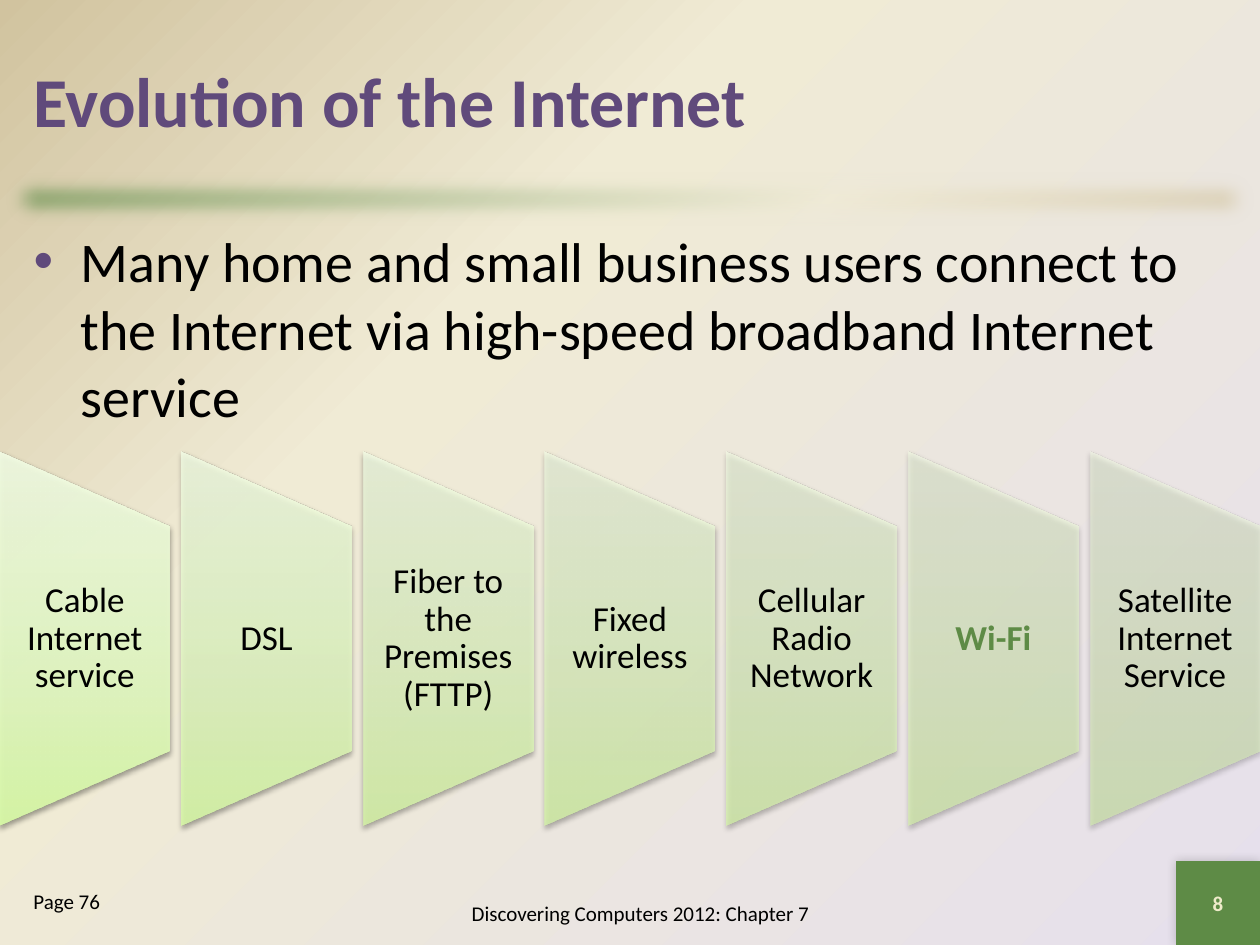
from pptx import Presentation
from pptx import util as u
from pptx.dml.color import RGBColor
from pptx.enum import shapes, text
from pptx.oxml import parse_xml
from pptx.oxml.ns import nsdecls, qn

PURPLE = RGBColor(0x60, 0x4A, 0x7B)
GREEN = RGBColor(0x5E, 0x8B, 0x46)
BLACK = RGBColor(0, 0, 0)
LAVENDER = RGBColor(0xE6, 0xE0, 0xEC)
CREAM = RGBColor(0xF0, 0xEB, 0xD5)
TAN = RGBColor(0xD1, 0xC3, 0x9F)
PALE_YELLOW = RGBColor(0xEE, 0xEB, 0xCA)
LIME = RGBColor(0xDA, 0xFD, 0xA7)
LIGHT_LIME = RGBColor(0xE4, 0xFC, 0xC2)
WHITE_LIME = RGBColor(0xF5, 0xFF, 0xE7)

TITLE = "Evolution of the Internet"
BODY = ("Many home and small business users connect to the Internet "
        "via high-speed broadband Internet service")
SERVICES = [
    "Cable Internet service",
    "DSL",
    "Fiber to the Premises (FTTP)",
    "Fixed wireless",
    "Cellular Radio Network",
    "Wi-Fi",
    "Satellite Internet Service",
]
HIGHLIGHT = "Wi-Fi"
PAGE = "Page 76"
FOOTER = "Discovering Computers 2012: Chapter 7"
NUMBER = "8"

SLIDE_WIDTH, SLIDE_HEIGHT = 720, 540
PANEL_WIDTH, PANEL_HEIGHT = 97, 214
PANEL_MIDDLE = 365
LABEL_HEIGHT = 128
CORNER = 48
CIRCLE = ('<a:path path="circle"><a:fillToRect l="100000" t="100000"/></a:path>'
          '<a:tileRect r="-100000" b="-100000"/>')


def place(shape, left, top, width, height):
    shape.left, shape.top = u.Pt(left), u.Pt(top)
    shape.width, shape.height = u.Pt(width), u.Pt(height)


def linear(angle):
    return f'<a:lin ang="{angle * 60000}" scaled="0"/>'


def set_gradient(parent, colors, direction, opacity=100):
    stops = "".join(
        f'<a:gs pos="{position * 1000}"><a:srgbClr val="{color}">'
        f'<a:alpha val="{round(opacity * 1000)}"/></a:srgbClr></a:gs>'
        for position, color in zip((0, 35 if LIME in colors else 65, 100), colors))
    gradient = parse_xml(
        f'<a:gradFill {nsdecls("a")} rotWithShape="0"><a:gsLst>{stops}</a:gsLst>'
        f'{direction}</a:gradFill>')
    parent.replace(parent.find(qn("a:solidFill")), gradient)


def add_effect(shape, effect):
    effects = shape._element.spPr.find(qn("a:effectLst"))
    effects.append(parse_xml(effect))


def shadow(blur, distance, angle, opacity):
    return (f'<a:outerShdw {nsdecls("a")} blurRad="{u.Pt(blur)}" dist="{u.Pt(distance)}" '
            f'dir="{angle * 60000}" algn="ctr" rotWithShape="0"><a:srgbClr val="{BLACK}">'
            f'<a:alpha val="{opacity * 1000}"/></a:srgbClr></a:outerShdw>')


def add_shape(slide, kind, left, top, width, height):
    shape = slide.shapes.add_shape(
        kind, u.Pt(left), u.Pt(top), u.Pt(width), u.Pt(height))
    shape.shadow.inherit = False
    shape.fill.solid()
    shape.fill.fore_color.rgb = GREEN
    shape.line.fill.background()
    return shape


def write(shape, words, size, color=BLACK, bold=False,
          align=text.PP_ALIGN.LEFT, anchor=text.MSO_ANCHOR.MIDDLE):
    frame = shape.text_frame
    frame.text = words
    frame.word_wrap = True
    frame.auto_size = text.MSO_AUTO_SIZE.NONE
    frame.vertical_anchor = anchor
    paragraph = frame.paragraphs[0]
    paragraph.alignment = align
    paragraph.space_before = u.Pt(0)
    font = paragraph.runs[0].font
    font.name, font.size, font.bold = "Calibri", u.Pt(size), bold
    font.color.rgb = color
    return paragraph


def add_text(slide, box, words, size, **style):
    shape = slide.shapes.add_textbox(*map(u.Pt, box))
    return shape, write(shape, words, size, **style)


def add_bullet(paragraph, indent, color):
    properties = paragraph._p.get_or_add_pPr()
    properties.set("marL", str(u.Pt(indent)))
    properties.set("indent", str(-u.Pt(indent)))
    for element in (f'<a:buClr {nsdecls("a")}><a:srgbClr val="{color}"/></a:buClr>',
                    f'<a:buFont {nsdecls("a")} typeface="Arial"/>',
                    f'<a:buChar {nsdecls("a")} char="•"/>'):
        properties.append(parse_xml(element))


def add_services(slide):
    pitch = (SLIDE_WIDTH - PANEL_WIDTH) / (len(SERVICES) - 1)
    for index, service in enumerate(SERVICES):
        left = index * pitch
        panel = add_shape(
            slide, shapes.MSO_SHAPE.FLOWCHART_MANUAL_OPERATION,
            left + (PANEL_WIDTH - PANEL_HEIGHT) / 2, PANEL_MIDDLE - PANEL_WIDTH / 2,
            PANEL_HEIGHT, PANEL_WIDTH)
        panel.rotation = 270
        opacity = 90 - 40 * index / (len(SERVICES) - 1)
        set_gradient(panel._element.spPr, (LIME, LIGHT_LIME, WHITE_LIME),
                     linear(270), opacity)
        add_effect(panel, shadow(3.1, 1.6, 90, 38))

        chosen = service == HIGHLIGHT
        label, paragraph = add_text(
            slide, (left, PANEL_MIDDLE - LABEL_HEIGHT / 2, PANEL_WIDTH, LABEL_HEIGHT),
            service, 20, color=GREEN if chosen else BLACK, bold=chosen,
            align=text.PP_ALIGN.CENTER)
        paragraph.line_spacing = 0.9
        frame = label.text_frame
        frame.margin_left = frame.margin_right = u.Pt(10)
        frame.margin_top = frame.margin_bottom = 0


def main():
    presentation = Presentation()
    presentation.slide_width = u.Pt(SLIDE_WIDTH)
    presentation.slide_height = u.Pt(SLIDE_HEIGHT)
    slide = presentation.slides.add_slide(presentation.slide_layouts[1])

    slide.background.fill.solid()
    set_gradient(slide._element.cSld.bg.bgPr, (LAVENDER, CREAM, TAN), CIRCLE)

    title, body = slide.placeholders
    place(title, 12, 12, 696, 90)
    write(title, TITLE, 40, PURPLE, bold=True)
    place(body, 12, 126, 696, 366)
    paragraph = write(body, BODY, 32, anchor=text.MSO_ANCHOR.TOP)
    add_bullet(paragraph, 27, PURPLE)

    bar = add_shape(slide, shapes.MSO_SHAPE.RECTANGLE, 0, 96, SLIDE_WIDTH, 36)
    set_gradient(bar._element.spPr, (GREEN, CREAM, TAN), linear(45))
    add_effect(bar, f'<a:softEdge {nsdecls("a")} rad="{u.Pt(12.5)}"/>')

    corner = add_shape(slide, shapes.MSO_SHAPE.RECTANGLE,
                       SLIDE_WIDTH - CORNER, SLIDE_HEIGHT - CORNER, CORNER, CORNER)
    add_effect(corner, shadow(6, 0, 225, 20))
    write(corner, NUMBER, 12, PALE_YELLOW, bold=True, align=text.PP_ALIGN.CENTER)

    add_text(slide, (12, 504, 132, 36), PAGE, 12, anchor=text.MSO_ANCHOR.TOP)
    add_text(slide, (216, 504, 300, 36), FOOTER, 12, align=text.PP_ALIGN.CENTER)
    add_services(slide)
    presentation.save("out.pptx")


if __name__ == "__main__":
    main()
